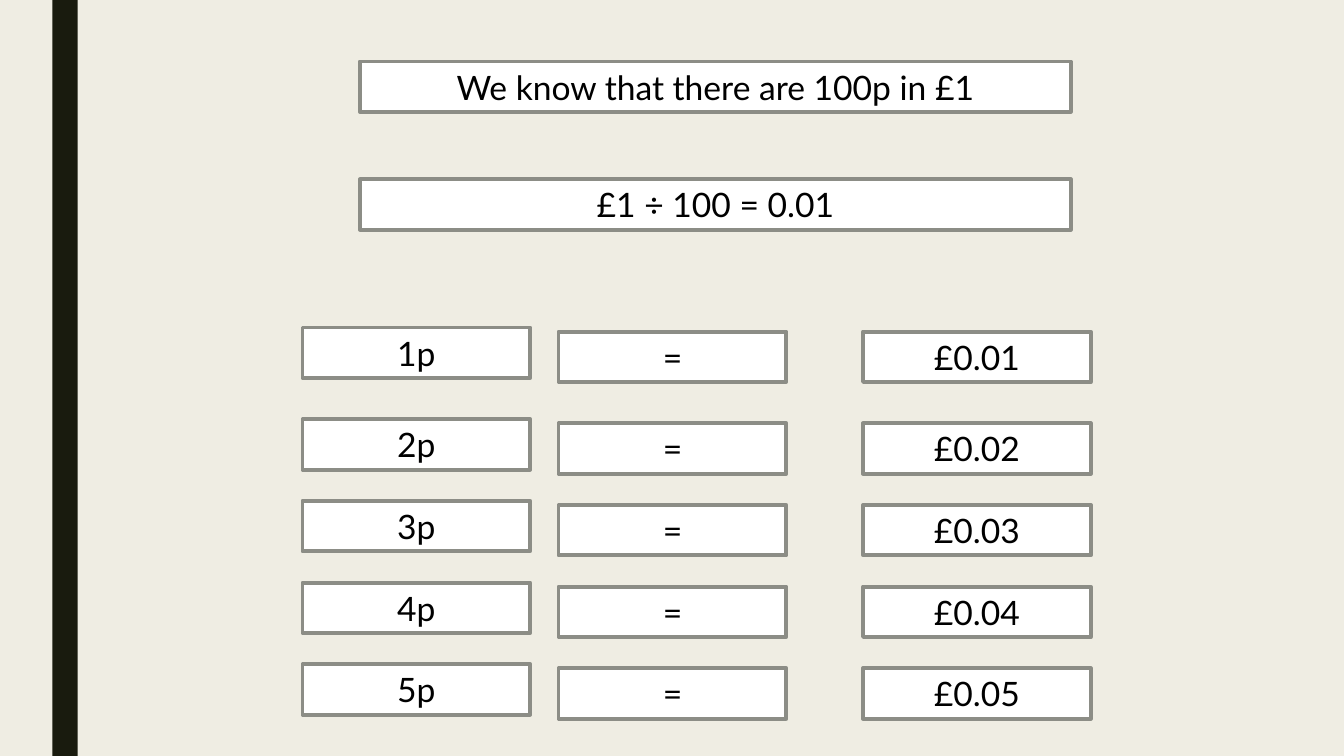
from pptx import Presentation
from pptx.dml.color import RGBColor
from pptx.enum.shapes import MSO_SHAPE
from pptx.enum.text import MSO_AUTO_SIZE, PP_ALIGN
from pptx.util import Pt

EMU_PER_PX = 9144  # 100 px to the inch
SLIDE_WIDTH, SLIDE_HEIGHT = 1333, 750

BACKGROUND = RGBColor(0xEF, 0xED, 0xE3)
BAR = RGBColor(0x19, 0x1B, 0x0E)
BORDER = RGBColor(0x8C, 0x8D, 0x86)
WHITE = RGBColor(0xFF, 0xFF, 0xFF)
BLACK = RGBColor(0x00, 0x00, 0x00)

RECTANGLE = MSO_SHAPE.RECTANGLE
CENTER = PP_ALIGN.CENTER
GROW = MSO_AUTO_SIZE.SHAPE_TO_FIT_TEXT

BOX_HEIGHT = 50
STATEMENT_LEFT, STATEMENT_WIDTH = 357, 705
STATEMENTS = [(61, "We know that there are 100p in £1"), (178, "£1 ÷ 100 = 0.01")]
CELL_WIDTH = 226
PENCE_LEFT, EQUALS_LEFT, POUNDS_LEFT = 300, 554, 856
FIRST_ROW_TOP, SECOND_ROW_TOP, ROW_PITCH = 325, 416, 81
RIGHT_COLUMNS_DROP = 4


def px(*lengths):
    return [length * EMU_PER_PX for length in lengths]


def write_text(text_frame, text, *, size=24, font="Lato", color=BLACK, align=CENTER):
    paragraph = text_frame.paragraphs[0]
    paragraph.alignment = align
    run = paragraph.add_run()
    run.text = text
    run.font.name = font
    run.font.size = Pt(size)
    run.font.color.rgb = color


class SlideBuilder:
    """Holds the current slide and the look shared by its elements."""

    def __init__(self, slide, border=BORDER, border_width=2.75):
        self.slide = slide
        self.border = border
        self.border_width = border_width

    def background(self, color):
        fill = self.slide.background.fill
        fill.solid()
        fill.fore_color.rgb = color

    def bar(self, left, top, width, height, color):
        shape = self.slide.shapes.add_shape(RECTANGLE, *px(left, top, width, height))
        shape.shadow.inherit = False
        shape.fill.solid()
        shape.fill.fore_color.rgb = color
        shape.line.fill.background()

    def box(self, left, top, width, text):
        shape = self.slide.shapes.add_textbox(*px(left, top, width, BOX_HEIGHT))
        shape.fill.solid()
        shape.fill.fore_color.rgb = WHITE
        shape.line.color.rgb = self.border
        shape.line.width = Pt(self.border_width)
        shape.text_frame.word_wrap = True
        shape.text_frame.auto_size = GROW
        write_text(shape.text_frame, text)


def main():
    presentation = Presentation()
    presentation.slide_width, presentation.slide_height = px(SLIDE_WIDTH, SLIDE_HEIGHT)
    builder = SlideBuilder(presentation.slides.add_slide(presentation.slide_layouts[6]))

    builder.background(BACKGROUND)
    builder.bar(52, 0, 25, SLIDE_HEIGHT, BAR)
    for top, text in STATEMENTS:
        builder.box(STATEMENT_LEFT, top, STATEMENT_WIDTH, text)

    row_tops = [FIRST_ROW_TOP] + [SECOND_ROW_TOP + ROW_PITCH * row for row in range(4)]
    for pence, top in enumerate(row_tops, start=1):
        right_top = top + RIGHT_COLUMNS_DROP
        builder.box(PENCE_LEFT, top, CELL_WIDTH, f"{pence}p")
        builder.box(EQUALS_LEFT, right_top, CELL_WIDTH, "=")
        builder.box(POUNDS_LEFT, right_top, CELL_WIDTH, f"£{pence / 100:.2f}")

    presentation.save("out.pptx")


if __name__ == "__main__":
    main()
